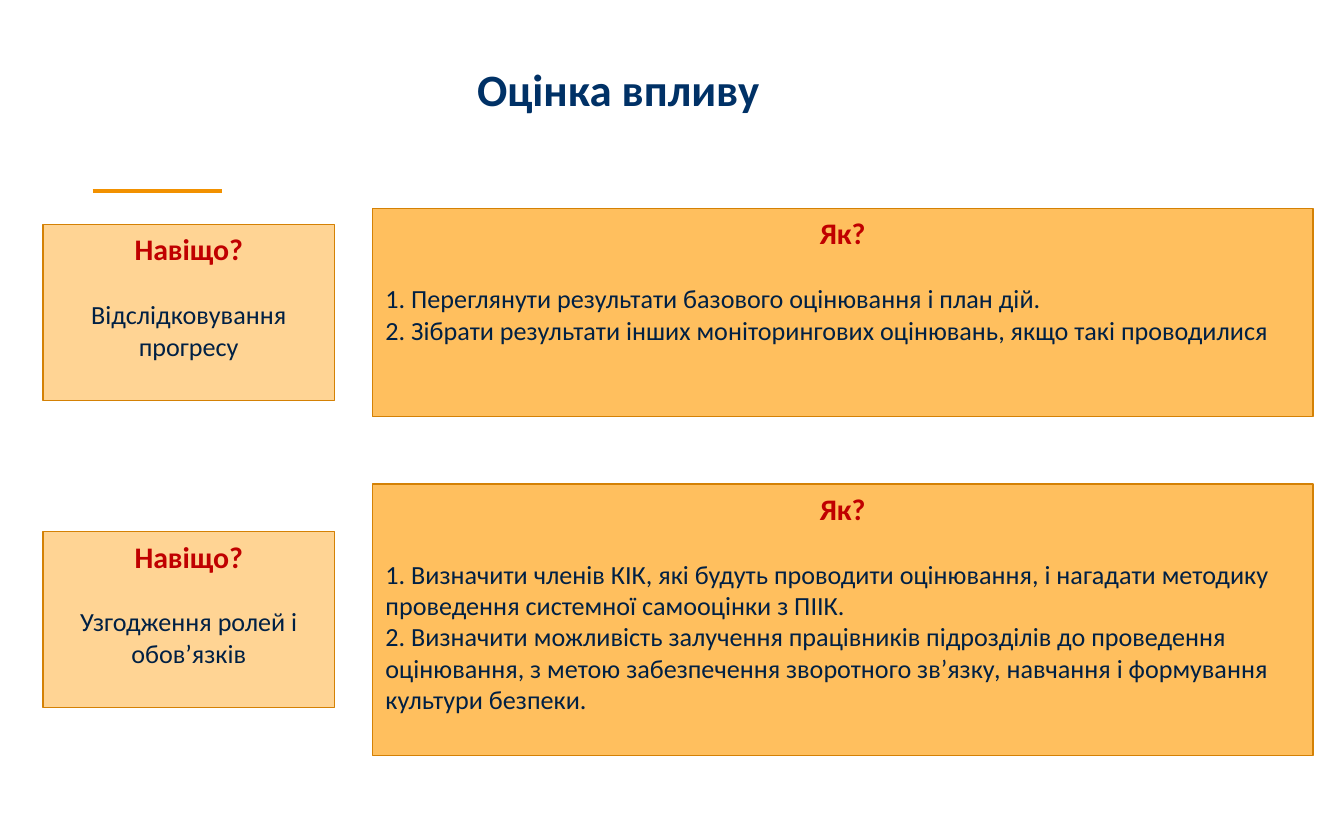
from lxml import etree
from pptx import Presentation
from pptx.dml.color import RGBColor
from pptx.enum.shapes import MSO_CONNECTOR, MSO_SHAPE
from pptx.enum.text import MSO_ANCHOR, PP_ALIGN
from pptx.oxml.ns import qn
from pptx.util import Inches, Pt

RECTANGLE = MSO_SHAPE.RECTANGLE
STRAIGHT = MSO_CONNECTOR.STRAIGHT
TOP, MIDDLE = MSO_ANCHOR.TOP, MSO_ANCHOR.MIDDLE
LEFT, CENTER = PP_ALIGN.LEFT, PP_ALIGN.CENTER

NAVY = RGBColor(0x00, 0x31, 0x66)
DARK_TEXT = RGBColor(0x00, 0x20, 0x44)
RED = RGBColor(0xC0, 0x00, 0x00)
ACCENT = RGBColor(0xF2, 0x91, 0x00)
BORDER = RGBColor(0xD4, 0x81, 0x05)
LIGHT_ORANGE = RGBColor(0xFF, 0xD4, 0x94)
ORANGE = RGBColor(0xFF, 0xBF, 0x5E)

FONT = "Calibri"
SLIDE_WIDTH, SLIDE_HEIGHT = 10, 6.25

# Two columns: the reason and the method (left edge, width)
WHY_COLUMN = (0.32, 2.17)
HOW_COLUMN = (2.77, 7)
WHY_HEIGHT = 1.31
HEADING_GAP = 17

# Each row: vertical centre, height of the method box, reason, steps
ROWS = [
    (2.325, 1.55, "Відслідковування прогресу", [
        "1. Переглянути результати базового оцінювання і план дій.",
        "2. Зібрати результати інших моніторингових оцінювань, "
        "якщо такі проводилися",
    ]),
    (4.61, 2.02, "Узгодження ролей і обов’язків", [
        "1. Визначити членів КІК, які будуть проводити оцінювання, "
        "і нагадати методику проведення системної самооцінки з ПІІК.",
        "2. Визначити можливість залучення працівників підрозділів до "
        "проведення оцінювання, з метою забезпечення зворотного зв’язку, "
        "навчання і формування культури безпеки.",
    ]),
]


def write_paragraph(paragraph, text, size=14, color=DARK_TEXT, bold=False,
                    align=LEFT, space_before=0):
    paragraph.text = text
    paragraph.alignment = align
    if space_before:
        paragraph.space_before = Pt(space_before)
    font = paragraph.font
    font.name, font.size, font.bold = FONT, Pt(size), bold
    font.color.rgb = color


def add_title(slide, text):
    title = slide.shapes.title
    title.left, title.top = Inches(1), Inches(0.41)
    title.width, title.height = Inches(7.2), Inches(0.5)
    title.text_frame.vertical_anchor = MIDDLE
    write_paragraph(title.text_frame.paragraphs[0], text, size=24,
                    color=NAVY, bold=True, align=CENTER)


def add_accent_line(slide):
    line = slide.shapes.add_connector(
        STRAIGHT, Inches(0.69), Inches(1.42), Inches(1.65), Inches(1.42))
    line.line.color.rgb = ACCENT
    line.line.width = Pt(2)
    etree.SubElement(line._element.spPr, qn("a:effectLst"))


def add_box(slide, column, center, height, fill, heading, body, align):
    left, width = column
    box = slide.shapes.add_shape(
        RECTANGLE, Inches(left), Inches(center - height / 2),
        Inches(width), Inches(height))
    box.shadow.inherit = False
    box.fill.solid()
    box.fill.fore_color.rgb = fill
    box.line.color.rgb = BORDER
    box.line.width = Pt(0.75)

    frame = box.text_frame
    frame.word_wrap = True
    frame.vertical_anchor = TOP
    write_paragraph(frame.paragraphs[0], heading, size=16, color=RED,
                    bold=True, align=CENTER)
    for index, text in enumerate(body):
        write_paragraph(frame.add_paragraph(), text, align=align,
                        space_before=0 if index else HEADING_GAP)


def main():
    presentation = Presentation()
    presentation.slide_width = Inches(SLIDE_WIDTH)
    presentation.slide_height = Inches(SLIDE_HEIGHT)
    slide = presentation.slides.add_slide(presentation.slide_layouts[5])

    # Header
    add_accent_line(slide)
    add_title(slide, "Оцінка впливу")

    # Reason and method, centred on each row
    for center, how_height, reason, steps in ROWS:
        add_box(slide, WHY_COLUMN, center, WHY_HEIGHT, LIGHT_ORANGE,
                "Навіщо?", [reason], CENTER)
        add_box(slide, HOW_COLUMN, center, how_height, ORANGE,
                "Як?", steps, LEFT)

    presentation.save("out.pptx")


if __name__ == "__main__":
    main()
